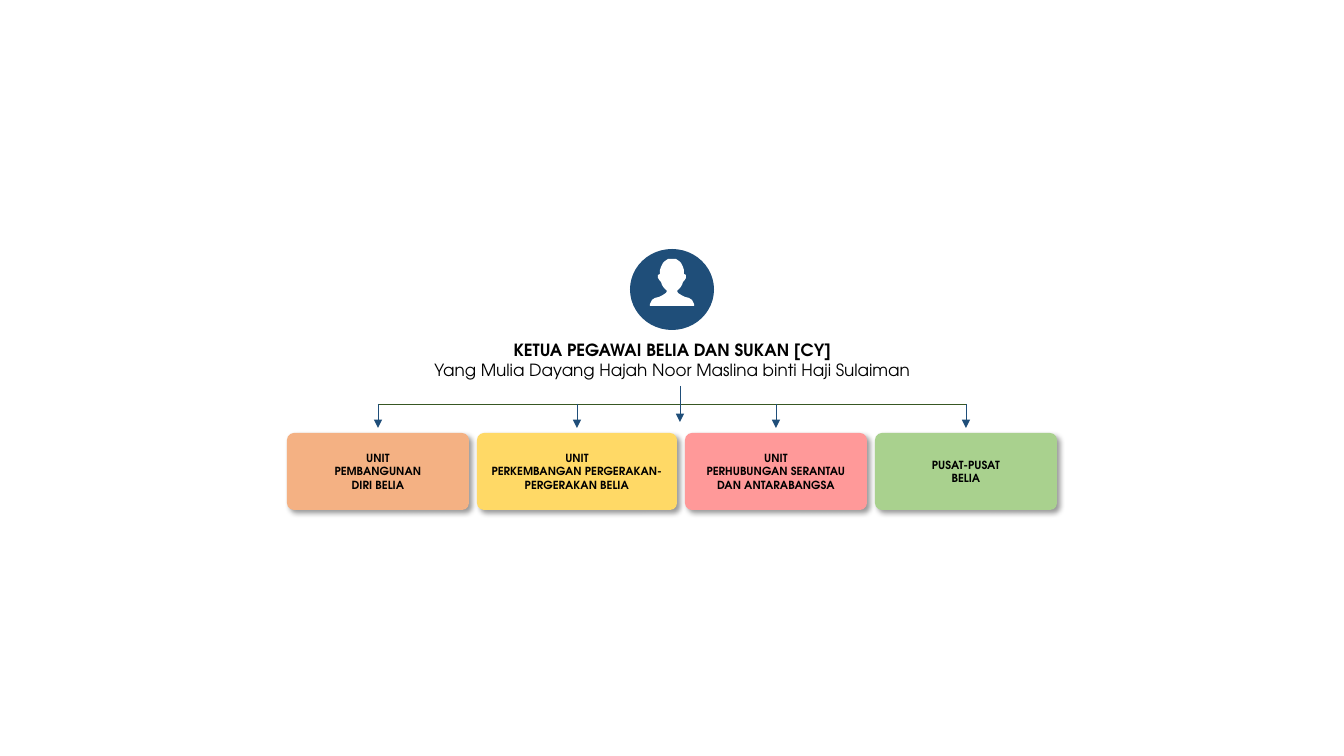
from dataclasses import dataclass

from lxml.etree import SubElement
from pptx import Presentation
from pptx.dml.color import RGBColor
from pptx.enum.shapes import MSO_CONNECTOR, MSO_SHAPE
from pptx.enum.text import MSO_ANCHOR, MSO_AUTO_SIZE, PP_ALIGN
from pptx.oxml.ns import qn
from pptx.util import Pt

PX = 914400 / 100.8


@dataclass(frozen=True)
class Theme:
    font: str = "TeX Gyre Adventor"
    head_size: int = 12
    unit_size: int = 8
    text: str = "000000"
    navy: str = "1F4E79"
    white: str = "FFFFFF"
    bus: str = "385723"
    orange: str = "F4B183"
    yellow: str = "FFD966"
    pink: str = "FF9999"
    green: str = "A9D18E"


theme = Theme()


def px(*lengths):
    return [round(length * PX) for length in lengths]


def add_line(x1, y1, x2, y2, color, arrow=True):
    line = slide.shapes.add_connector(MSO_CONNECTOR.STRAIGHT, *px(x1, y1, x2, y2))
    line.line.color.rgb = RGBColor.from_string(color)
    line.line.width = Pt(0.5)
    if arrow:
        SubElement(line.line._get_or_add_ln(), qn("a:tailEnd"), type="triangle")
    SubElement(line._element.spPr, qn("a:effectLst"))


prs = Presentation()
prs.slide_width, prs.slide_height = px(1344, 756)
slide = prs.slides.add_slide(prs.slide_layouts[6])

# Head of the organisation: portrait badge
badge = slide.shapes.add_shape(MSO_SHAPE.OVAL, *px(630, 249, 84, 81))

# Right half of the silhouette as (distance from the axis, y), top to bottom
AXIS = 672
half = [(0, 259), (4, 259), (7, 261), (9, 263), (11, 267), (12, 270), (12, 274),
        (14, 275), (14, 278), (12, 281), (11, 282), (10, 285), (8, 288), (5, 291),
        (6, 293), (9, 295), (13, 297), (17, 298), (20, 300), (22, 304), (22, 306)]
outline = [(AXIS + dx, y) for dx, y in half]
outline += [(AXIS - dx, y) for dx, y in reversed(half[1:])]
builder = slide.shapes.build_freeform(*outline[0], scale=PX)
builder.add_line_segments(outline[1:], close=True)
person = builder.convert_to_shape()

for part, color in ((badge, theme.navy), (person, theme.white)):
    part.shadow.inherit = False
    part.fill.solid()
    part.fill.fore_color.rgb = RGBColor.from_string(color)
    part.line.fill.background()

# Title and name
heading = slide.shapes.add_textbox(*px(378, 335, 589, 50)).text_frame
heading.word_wrap = True
heading.auto_size = MSO_AUTO_SIZE.SHAPE_TO_FIT_TEXT
title = heading.paragraphs[0]
title.alignment = PP_ALIGN.CENTER
title.font.name = theme.font
title.font.size = Pt(theme.head_size)
title.font.color.rgb = RGBColor.from_string(theme.text)
post = title.add_run()
post.text = "KETUA PEGAWAI BELIA DAN SUKAN [CY]"
post.font.bold = True
title.add_line_break()
title.add_run().text = "Yang Mulia Dayang Hajah Noor Maslina binti Haji Sulaiman"

# Units
UNIT_TOP, UNIT_HEIGHT, UNIT_GAP = 433, 77, 8
BUS_Y, ARROW_END = 404, 428
units = [
    (182, theme.orange, ["UNIT", "PEMBANGUNAN", "DIRI BELIA"]),
    (200, theme.yellow, ["UNIT", "PERKEMBANGAN PERGERAKAN-PERGERAKAN BELIA"]),
    (182, theme.pink, ["UNIT", "PERHUBUNGAN SERANTAU DAN ANTARABANGSA"]),
    (182, theme.green, ["PUSAT-PUSAT", "BELIA"]),
]
left = 287
centers = []
for width, color, lines in units:
    unit = slide.shapes.add_shape(
        MSO_SHAPE.ROUNDED_RECTANGLE, *px(left, UNIT_TOP, width, UNIT_HEIGHT))
    unit.adjustments[0] = 0.09
    unit.fill.solid()
    unit.fill.fore_color.rgb = RGBColor.from_string(color)
    unit.line.fill.background()

    unit.shadow.inherit = False
    effects = unit._element.spPr.find(qn("a:effectLst"))
    shadow = SubElement(effects, qn("a:outerShdw"), blurRad=str(Pt(4)),
                        dist=str(Pt(3)), dir="2700000", algn="tl", rotWithShape="0")
    shade = SubElement(shadow, qn("a:srgbClr"), val=theme.text)
    SubElement(shade, qn("a:alpha"), val="40000")

    label = unit.text_frame
    label.word_wrap = True
    label.vertical_anchor = MSO_ANCHOR.MIDDLE
    label.text = "\n".join(lines)
    for paragraph in label.paragraphs:
        paragraph.alignment = PP_ALIGN.CENTER
        paragraph.font.name = theme.font
        paragraph.font.size = Pt(theme.unit_size)
        paragraph.font.bold = True
        paragraph.font.color.rgb = RGBColor.from_string(theme.text)

    centers.append(left + width // 2)
    left += width + UNIT_GAP

# Branches from the head to the units
add_line(centers[0], BUS_Y, centers[-1], BUS_Y, theme.bus, arrow=False)
for center in centers:
    add_line(center, BUS_Y, center, ARROW_END, theme.navy)
add_line(680, 386, 680, 422, theme.navy)

prs.save("out.pptx")
